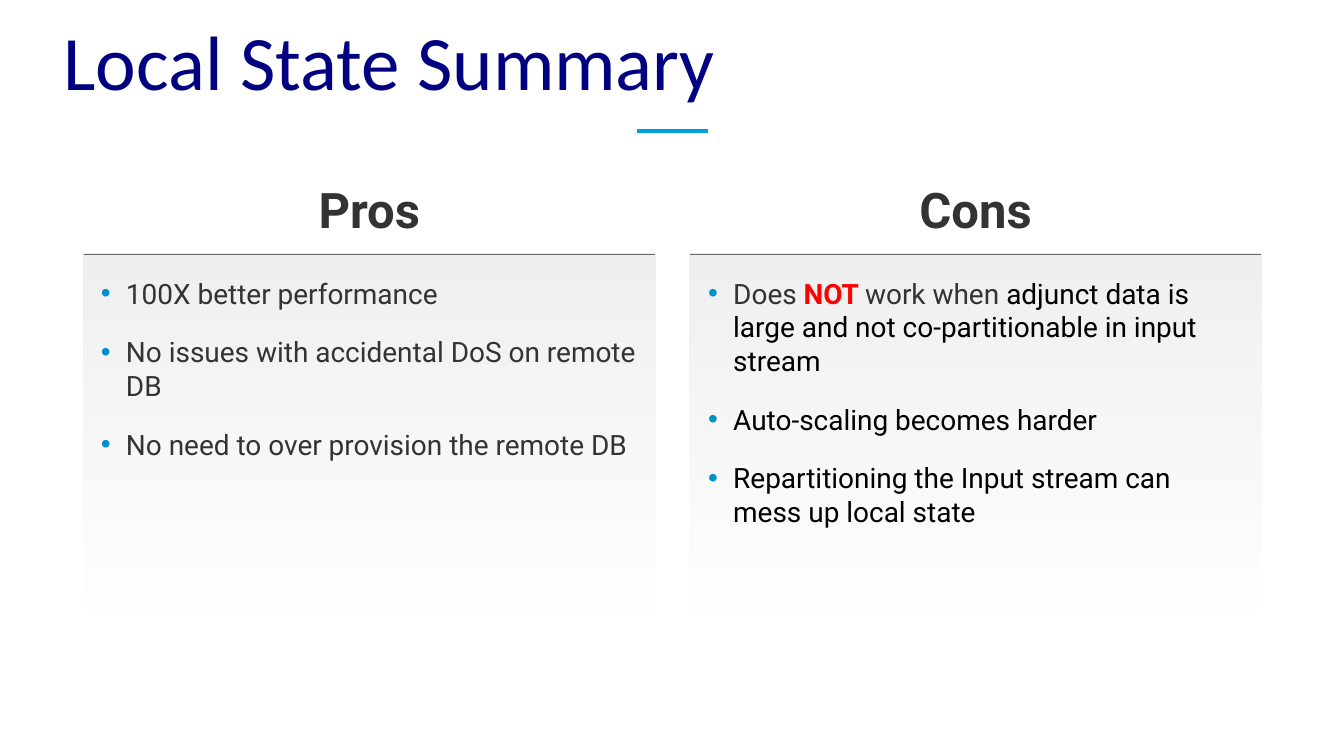
from lxml import etree
from pptx import Presentation
from pptx.dml.color import RGBColor
from pptx.enum.shapes import MSO_CONNECTOR, MSO_SHAPE
from pptx.enum.text import MSO_ANCHOR, PP_ALIGN
from pptx.oxml.ns import qn
from pptx.util import Inches, Pt

STRAIGHT = MSO_CONNECTOR.STRAIGHT
RECTANGLE = MSO_SHAPE.RECTANGLE
TOP, BOTTOM = MSO_ANCHOR.TOP, MSO_ANCHOR.BOTTOM
LEFT, CENTER = PP_ALIGN.LEFT, PP_ALIGN.CENTER

COLORS = {
    "title": "000080",
    "text": "313335",
    "black": "000000",
    "alert": "FF0000",
    "accent": "00A0DC",
    "bullet": "0091C9",
    "rule": "666666",
    "panel": "BFBFBF",
}

PANEL_WIDTH, PANEL_TOP, PANEL_HEIGHT = 42.52, 33.6, 48.13
HEADING_TOP, HEADING_HEIGHT = 24.33, 7.2
LIST_TOP, LIST_HEIGHT = 36.53, 38.33

SIDES = [
    {
        "heading": "Pros",
        "left": 6.22,
        "list_left": 7.5,
        "list_width": 40.12,
        "items": [
            [("100X better performance", "text", False)],
            [("No issues with accidental DoS on remote DB", "text", False)],
            [("No need to over provision the remote DB", "text", False)],
        ],
    },
    {
        "heading": "Cons",
        "left": 51.33,
        "list_left": 52.68,
        "list_width": 39.67,
        "items": [
            [
                ("Does ", "text", False),
                ("NOT ", "alert", True),
                ("work when", "text", False),
                (" adjunct data is large and not co-partitionable in input stream", "black", False),
            ],
            [("Auto-scaling becomes harder", "black", False)],
            [("Repartitioning the Input stream can mess up local state", "black", False)],
        ],
    },
]


class SlideBuilder:
    def __init__(self, presentation):
        self.slide = presentation.slides.add_slide(presentation.slide_layouts[6])
        self.column = presentation.slide_width / 100
        self.row = presentation.slide_height / 100

    def box(self, left, top, width, height):
        return (
            round(left * self.column),
            round(top * self.row),
            round(width * self.column),
            round(height * self.row),
        )

    def line(self, shapes, left, top, width, color, weight):
        x, y, length, _ = self.box(left, top, width, 0)
        connector = shapes.add_connector(STRAIGHT, x, y, x + length, y)
        connector.line.color.rgb = RGBColor.from_string(COLORS[color])
        connector.line.width = Pt(weight)
        etree.SubElement(connector._element.spPr, qn("a:effectLst"))

    def panel(self, left):
        group = self.slide.shapes.add_group_shape()
        shape = group.shapes.add_shape(
            RECTANGLE, *self.box(left, PANEL_TOP, PANEL_WIDTH, PANEL_HEIGHT)
        )
        shape.shadow.inherit = False
        shape.line.fill.background()
        shape.fill.gradient()
        shape.fill.gradient_angle = 270
        for stop, position, opacity in zip(shape.fill.gradient_stops, (0, 1), (25, 0)):
            stop.position = position
            stop.color.rgb = RGBColor.from_string(COLORS["panel"])
            color = stop._gs.find(qn("a:srgbClr"))
            etree.SubElement(color, qn("a:alpha"), val=str(opacity * 1000))
        self.line(group.shapes, left, PANEL_TOP, PANEL_WIDTH, "rule", 1)

    def text(self, box, paragraphs, font, size, anchor=TOP, align=LEFT, inset=0, bullets=False):
        text_frame = self.slide.shapes.add_textbox(*self.box(*box)).text_frame
        text_frame.word_wrap = True
        text_frame.vertical_anchor = anchor
        text_frame.margin_left = text_frame.margin_right = 0
        text_frame.margin_top = text_frame.margin_bottom = Inches(inset)
        for index, runs in enumerate(paragraphs):
            paragraph = text_frame.add_paragraph() if index else text_frame.paragraphs[0]
            paragraph.alignment = align
            for content, color, bold in runs:
                run = paragraph.add_run()
                run.text = content
                run.font.name = font
                run.font.size = Pt(size)
                run.font.bold = bold
                run.font.color.rgb = RGBColor.from_string(COLORS[color])
            if bullets:
                self.bullet(paragraph, 36 if index else 0)

    def bullet(self, paragraph, space_before):
        paragraph.space_before = Pt(space_before)
        properties = paragraph._p.get_or_add_pPr()
        properties.set("marL", str(Inches(0.5)))
        properties.set("indent", str(Inches(-0.53)))
        color = etree.SubElement(properties, qn("a:buClr"))
        etree.SubElement(color, qn("a:srgbClr"), val=COLORS["bullet"])
        etree.SubElement(properties, qn("a:buFont"), typeface="Arial")
        etree.SubElement(properties, qn("a:buChar"), char="•")


def main():
    presentation = Presentation()
    presentation.slide_width = Inches(26.67)
    presentation.slide_height = Inches(15)
    builder = SlideBuilder(presentation)

    builder.line(builder.slide.shapes, 47.4, 17.33, 5.25, "accent", 5)
    for side in SIDES:
        builder.panel(side["left"])
    builder.text(
        (4.72, 5.87, 90.74, 8.8),
        [[("Local State Summary", "title", False)]],
        "Calibri", 110, anchor=BOTTOM, inset=0.1,
    )
    for side in SIDES:
        builder.text(
            (side["left"], HEADING_TOP, PANEL_WIDTH, HEADING_HEIGHT),
            [[(side["heading"], "text", True)]],
            "Roboto", 70, anchor=BOTTOM, align=CENTER,
        )
        builder.text(
            (side["list_left"], LIST_TOP, side["list_width"], LIST_HEIGHT),
            side["items"],
            "Roboto", 40, bullets=True,
        )

    presentation.save("out.pptx")


if __name__ == "__main__":
    main()
